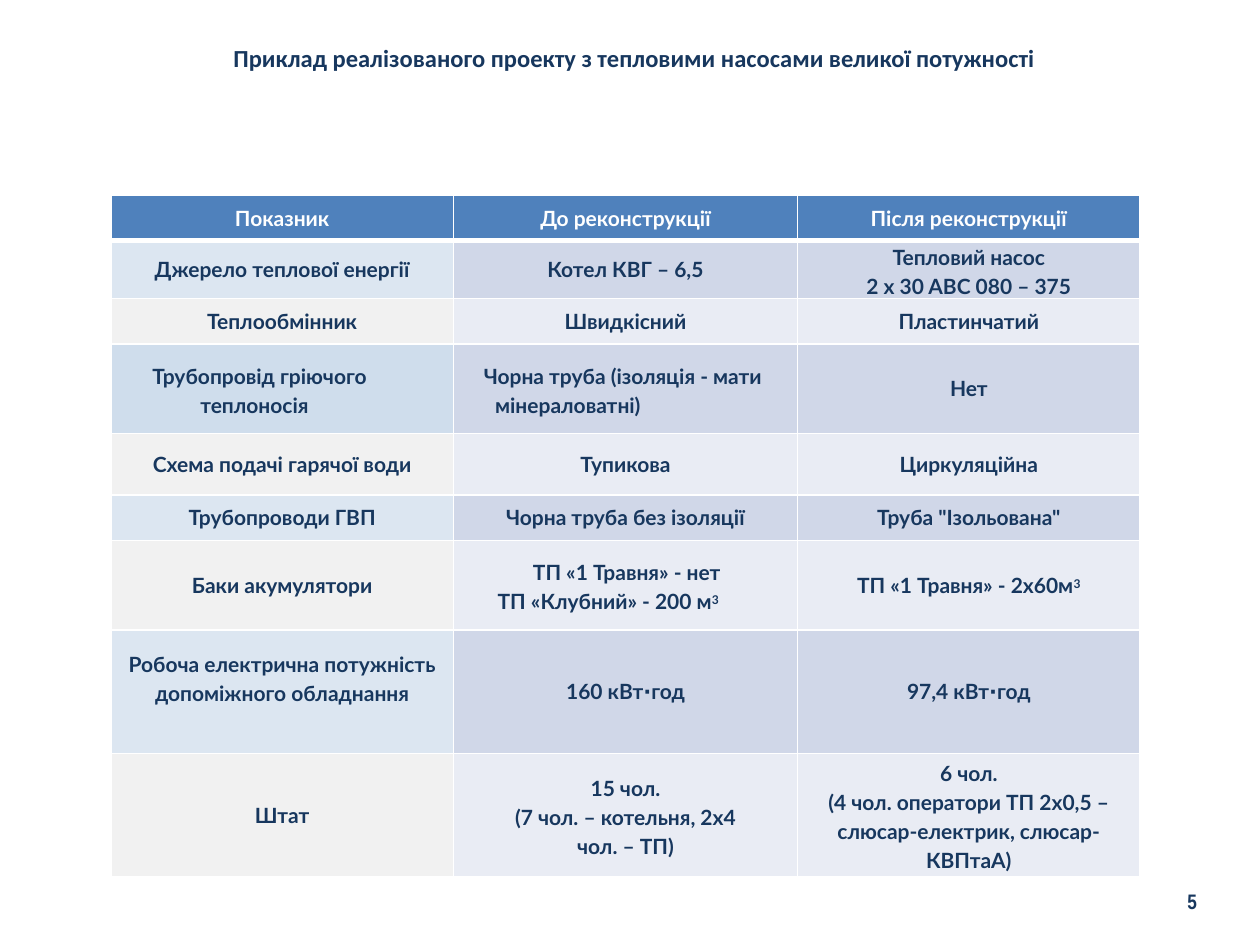
from dataclasses import dataclass
from lxml.etree import SubElement
from pptx import Presentation
from pptx.dml.color import RGBColor
from pptx.enum.text import MSO_ANCHOR, PP_ALIGN
from pptx.oxml.ns import qn
from pptx.util import Inches, Pt


@dataclass(frozen=True)
class Theme:
    ink: str = "17375E"
    white: str = "FFFFFF"
    head: str = "4F81BC"
    odd: tuple = ("DCE6F1", "D0D7E8", "D0D7E8")
    even: tuple = ("F1F1F1", "E9ECF4", "E9ECF4")
    pipe: str = "CFDDEC"
    body: str = "Lato"
    title: str = "Calibri"
    page: str = "Arial Narrow"
    dot: str = "Arial"
    title_size: int = 14
    size: int = 12
    thin: int = 1
    thick: int = 3


@dataclass(frozen=True)
class Para:
    """Runs of text with left, right and first-line indents in inches."""
    runs: tuple
    left: float = 0
    right: float = 0
    first: float = 0
    align: PP_ALIGN = PP_ALIGN.CENTER
    space: float = 1.0


def wide(*runs, **opts):
    return Para(runs, space=1.15, **opts)


T = Theme()
LEFT = PP_ALIGN.LEFT
CUBE = ("3", "sup")
DOT = ("⋅", "dot")

TITLE = "Приклад реалізованого проекту з тепловими насосами великої потужності"
PAGE = "5"
# A cell is a plain string or a list of paragraphs.
ROWS = [
    (0.36, "Показник", "До реконструкції", "Після реконструкції"),
    (0.46, "Джерело теплової енергії", "Котел КВГ – 6,5",
     [wide("Тепловий насос"), wide("2 x 30 ABC 080 – 375")]),
    (0.36, "Теплообмінник", "Швидкісний", "Пластинчатий"),
    (0.71,
     [wide("Трубопровід гріючого теплоносія", left=0.71, first=-0.38, align=LEFT)],
     [wide("Чорна труба (ізоляція - мати мінераловатні)",
           left=0.33, first=-0.09, align=LEFT)],
     "Нет"),
    (0.49, "Схема подачі гарячої води", "Тупикова", "Циркуляційна"),
    (0.36, "Трубопроводи ГВП", "Чорна труба без ізоляції", "Труба \"Ізольована\""),
    (0.71, "Баки акумулятори",
     [wide("ТП «1 Травня» - нет", left=0.63, align=LEFT),
      wide("ТП «Клубний» - 200 м", CUBE, left=0.35, align=LEFT)],
     [Para(("ТП «1 Травня» - 2x60м", CUBE))]),
    (0.98, [wide("Робоча електрична потужність допоміжного обладнання")],
     [Para(("160 кВт", DOT, "год"))], [Para(("97,4 кВт", DOT, "год"))]),
    (0.98, "Штат",
     [wide("15 чол."),
      wide("(7 чол. – котельня, 2x4 чол. – ТП)", left=0.45, right=0.45)],
     [wide("6 чол."),
      wide("(4 чол. оператори ТП 2x0,5 – слюсар-електрик, слюсар-КВПтаА)",
           left=0.2, right=0.2)]),
]
COLS = (2.72, 2.73, 2.72)
PIPE_ROW, POWER_ROW = 3, 7


def add_run(para, text, font, size, color):
    run = para.add_run()
    run.text = text
    run.font.name, run.font.size, run.font.bold = font, Pt(size), True
    run.font.color.rgb = RGBColor.from_string(color)
    return run


def add_label(slide, box, text, font, size, align, anchor, inset=None):
    frame = slide.shapes.add_textbox(*map(Inches, box)).text_frame
    frame.word_wrap = True
    frame.vertical_anchor = anchor
    if inset is not None:
        frame.margin_left = frame.margin_right = Inches(inset)
        frame.margin_top = frame.margin_bottom = Inches(inset)
    para = frame.paragraphs[0]
    para.alignment = align
    add_run(para, text, font, size, T.ink)


def add_edges(cell, row):
    props = cell._tc.get_or_add_tcPr()
    for side in "LRTB":
        heavy = (row, side) in ((0, "B"), (1, "T"))
        line = SubElement(props, qn(f"a:ln{side}"),
                          w=str(Pt(T.thick if heavy else T.thin)))
        fill = SubElement(line, qn("a:solidFill"))
        SubElement(fill, qn("a:srgbClr"), val=T.white)


def fill_text(cell, paras, color):
    frame = cell.text_frame
    for i, item in enumerate(paras):
        para = frame.add_paragraph() if i else frame.paragraphs[0]
        para.alignment, para.line_spacing = item.align, item.space
        props = para._p.get_or_add_pPr()
        for name, inch in (("marL", item.left), ("marR", item.right),
                           ("indent", item.first)):
            props.set(name, str(Inches(inch)))
        for part in item.runs:
            text, kind = (part, "") if isinstance(part, str) else part
            font = T.dot if kind == "dot" else T.body
            run = add_run(para, text, font, T.size, color)
            if kind == "sup":
                run.font._element.set("baseline", "24000")


def cell_color(row, col):
    if row == 0:
        return T.head
    if (row, col) == (PIPE_ROW, 0):
        return T.pipe
    return (T.odd if row % 2 else T.even)[col]


def add_grid(slide):
    high = sum(row[0] for row in ROWS)
    table = slide.shapes.add_table(
        len(ROWS), len(COLS), Inches(0.88), Inches(1.55),
        Inches(sum(COLS)), Inches(high)).table
    for col, width in enumerate(COLS):
        table.columns[col].width = Inches(width)
    for r, (height, *cells) in enumerate(ROWS):
        table.rows[r].height = Inches(height)
        for c, text in enumerate(cells):
            cell = table.cell(r, c)
            cell.margin_left = cell.margin_right = 0
            cell.margin_top = cell.margin_bottom = 0
            if (r, c) == (POWER_ROW, 0):
                cell.margin_bottom = Inches(0.24)
            cell.vertical_anchor = MSO_ANCHOR.MIDDLE
            add_edges(cell, r)
            cell.fill.solid()
            cell.fill.fore_color.rgb = RGBColor.from_string(cell_color(r, c))
            paras = [Para((text,))] if isinstance(text, str) else text
            fill_text(cell, paras, T.ink if r else T.white)


def main():
    deck = Presentation()
    deck.slide_width, deck.slide_height = Inches(10), Inches(7.5)
    slide = deck.slides.add_slide(deck.slide_layouts[6])
    add_label(slide, (0.52, 0.29, 9.03, 0.34), TITLE, T.title, T.title_size,
              PP_ALIGN.CENTER, MSO_ANCHOR.TOP)
    add_grid(slide)
    add_label(slide, (7.17, 6.95, 2.33, 0.4), PAGE, T.page, T.size,
              PP_ALIGN.RIGHT, MSO_ANCHOR.MIDDLE, 0)
    deck.save("out.pptx")


if __name__ == "__main__":
    main()
